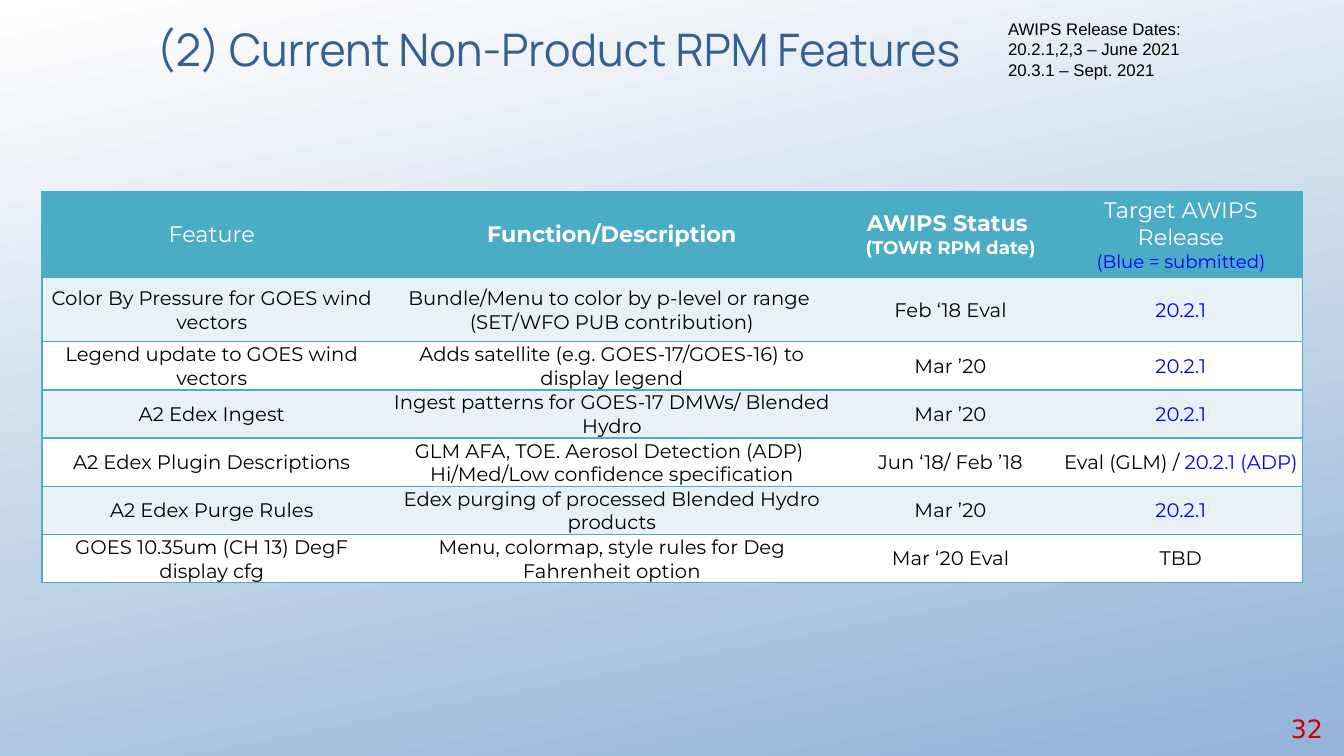
from lxml import etree
from pptx import Presentation
from pptx import util as u
from pptx.dml import color
from pptx.enum import text
from pptx.oxml import ns

BLUE, TEAL, WHITE, BLACK, PALE = "0000FF", "4BACC6", "FFFFFF", "000000", "E8F1F5"
CENTER, MIDDLE = text.PP_ALIGN.CENTER, text.MSO_ANCHOR.MIDDLE
BODY = dict(name="Montserrat", size=u.Pt(14), bold=False, color=BLACK)
HEAD = dict(BODY, size=u.Pt(16), bold=True, color=WHITE)
SUBHEAD = dict(size=u.Pt(13))
LIGHT = dict(bold=False)
SUBMITTED = dict(color=BLUE)
RELEASED = [[("20.2.1", SUBMITTED)]]

HEADERS = [
    [[("Feature", LIGHT)]],
    ["Function/Description"],
    ["AWIPS Status ", [("(TOWR RPM date)", SUBHEAD)]],
    [[("Target AWIPS Release", LIGHT)],
     [("(Blue = submitted)", {**SUBHEAD, **LIGHT, **SUBMITTED})]],
]
FEATURES = [
    [["Color By Pressure for GOES wind vectors"],
     ["Bundle/Menu to color by p-level or range ", "(SET/WFO PUB contribution)"],
     ["Feb ‘18 Eval"], RELEASED],
    [["Legend update to GOES wind vectors"],
     ["Adds satellite (e.g. GOES-17/GOES-16) to display legend"],
     ["Mar ’20"], RELEASED],
    [["A2 Edex Ingest"],
     ["Ingest patterns for GOES-17 DMWs/ Blended Hydro"],
     ["Mar ’20"], RELEASED],
    [["A2 Edex Plugin Descriptions"],
     ["GLM AFA, TOE. Aerosol Detection (ADP) ", "Hi/Med/Low confidence specification"],
     ["Jun ‘18/ Feb ’18"],
     [[("Eval (GLM) /", {}), (" 20.2.1 (ADP)", SUBMITTED)]]],
    [["A2 Edex Purge Rules"],
     ["Edex purging of processed Blended Hydro products"],
     ["Mar ’20"], RELEASED],
    [["GOES 10.35um (CH 13) DegF display cfg"],
     ["Menu, colormap, style rules for Deg Fahrenheit option"],
     ["Mar ‘20 Eval"], ["TBD"]],
]


def rgb(value):
    return color.RGBColor.from_string(value)


class Deck:
    """Hold the presentation, its current slide and the shared style."""

    def __init__(self, width, height):
        self.prs = Presentation()
        self.prs.slide_width, self.prs.slide_height = u.Pt(width), u.Pt(height)
        self.slide = self.prs.slides.add_slide(self.prs.slide_layouts[5])

    def background(self, start, end, angle):
        fill = self.slide.background.fill
        fill.gradient()
        fill.gradient_angle = angle
        for stop, value in zip(fill.gradient_stops, (start, end)):
            stop.color.rgb = rgb(value)

    def add_lines(self, tf, lines, style, align):
        for i, line in enumerate(lines):
            p = tf.paragraphs[0] if i == 0 else tf.add_paragraph()
            p.alignment = align
            for words, changes in [(line, {})] if isinstance(line, str) else line:
                r = p.add_run()
                r.text = words
                fmt = {**style, **changes}
                r.font.color.rgb = rgb(fmt.pop("color"))
                for key, value in fmt.items():
                    setattr(r.font, key, value)

    def title(self, words, box, style):
        sp = self.slide.shapes.title
        sp.left, sp.top, sp.width, sp.height = map(u.Pt, box)
        sp.text_frame.vertical_anchor = MIDDLE
        self.add_lines(sp.text_frame, [words], style, CENTER)

    def textbox(self, lines, box, style, align=text.PP_ALIGN.LEFT, anchor=text.MSO_ANCHOR.TOP):
        tf = self.slide.shapes.add_textbox(*map(u.Pt, box)).text_frame
        tf.word_wrap = True
        tf.vertical_anchor = anchor
        self.add_lines(tf, lines, style, align)

    def borders(self, cell, sides):
        tc_pr = cell._tc.get_or_add_tcPr()
        for side in "LRTB":
            ln = etree.SubElement(tc_pr, ns.qn("a:ln" + side), w=str(u.Pt(1)))
            if side in sides:
                fill = etree.SubElement(ln, ns.qn("a:solidFill"))
                etree.SubElement(fill, ns.qn("a:srgbClr"), val=TEAL)
            else:
                etree.SubElement(ln, ns.qn("a:noFill"))

    def cell(self, cell, lines, style, fill, margins, sides):
        self.borders(cell, sides)
        cell.fill.solid()
        cell.fill.fore_color.rgb = rgb(fill)
        cell.vertical_anchor = MIDDLE
        for side, margin in zip(("left", "top", "right", "bottom"), margins):
            setattr(cell, "margin_" + side, u.Pt(margin))
        self.add_lines(cell.text_frame, lines, style, CENTER)

    def table(self, rows, left, top, widths, heights):
        table = self.slide.shapes.add_table(
            len(rows), len(widths), u.Pt(left), u.Pt(top),
            u.Pt(sum(widths)), u.Pt(sum(heights))).table
        for column, width in zip(table.columns, widths):
            column.width = u.Pt(width)
        for row, height in zip(table.rows, heights):
            row.height = u.Pt(height)
        for i, row in enumerate(rows):
            style, margins = (BODY, (0.72, 0.72, 0.72, 0)) if i else (HEAD, (7.2, 3.6, 7.2, 3.6))
            fill = (WHITE, PALE)[i % 2] if i else TEAL
            for j, lines in enumerate(row):
                sides = "TB" + "L" * (j == 0) + "R" * (j == len(row) - 1)
                self.cell(table.cell(i, j), lines, style, fill, margins, sides)


def main():
    deck = Deck(960, 540)
    deck.background("93B3D7", WHITE, 101)
    deck.textbox(["32"], (908, 505.5, 44, 29),
                 dict(name="DejaVu Sans", size=u.Pt(18), color="CC0000"),
                 text.PP_ALIGN.RIGHT, MIDDLE)
    deck.table([HEADERS] + FEATURES, 30, 137,
               (242.6, 329, 154.8, 174.2), [60.5, 46] + [32] * 5)
    deck.title("(2) Current Non-Product RPM Features", (48, 0, 702, 69),
               dict(name="Manrope", size=u.Pt(32), color="376092"))
    deck.textbox(["AWIPS Release Dates:", "20.2.1,2,3 – June 2021", "20.3.1 – Sept. 2021"],
                 (713, 10, 150.5, 51), dict(name="Arial", size=u.Pt(12), color=BLACK))
    deck.prs.save("out.pptx")


if __name__ == "__main__":
    main()
